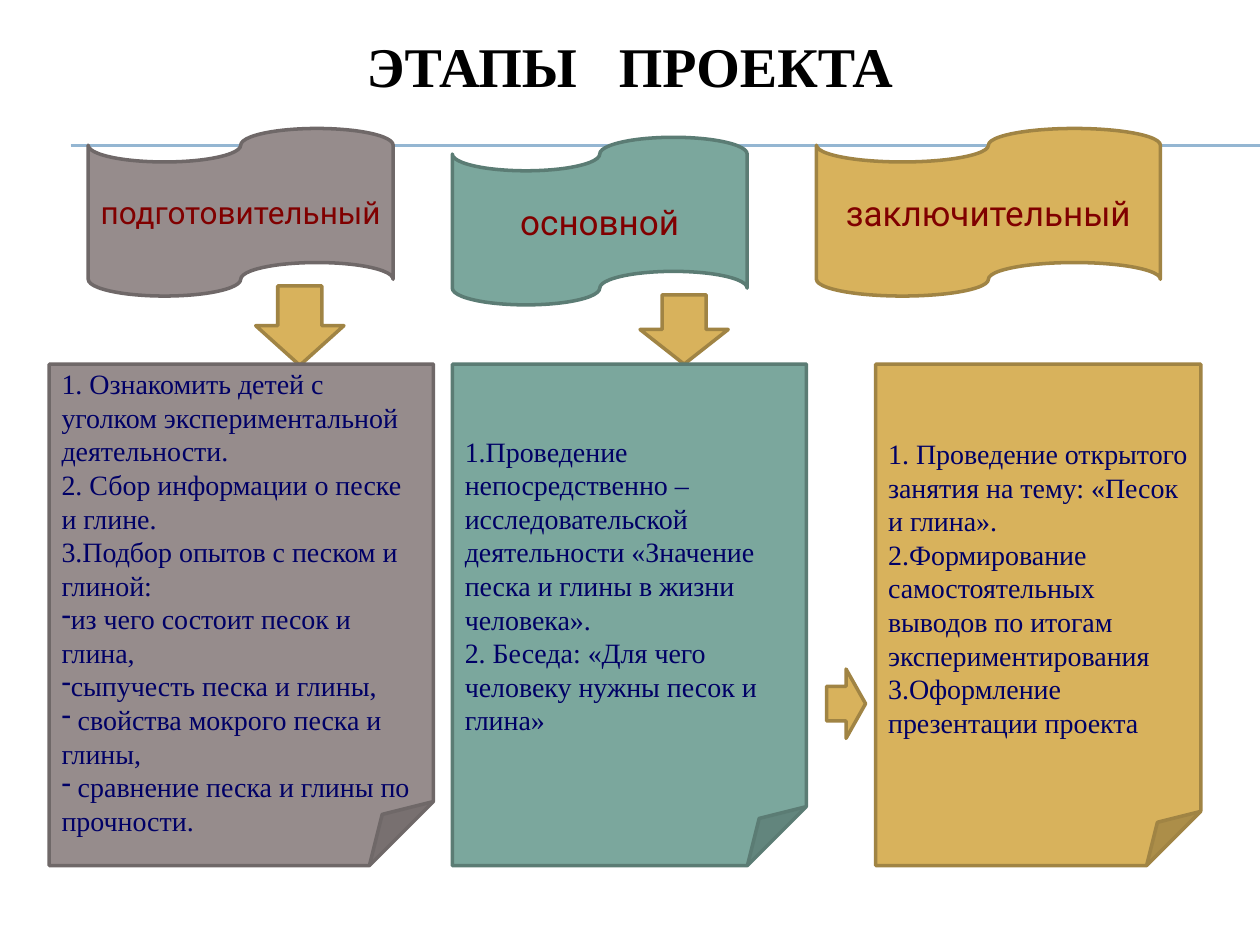
from lxml import etree
from pptx import Presentation
from pptx.dml.color import RGBColor
from pptx.enum.shapes import MSO_CONNECTOR, MSO_SHAPE
from pptx.enum.text import MSO_ANCHOR, PP_ALIGN
from pptx.oxml.ns import qn
from pptx.util import Inches, Pt

TAPE, NOTE = MSO_SHAPE.FLOWCHART_PUNCHED_TAPE, MSO_SHAPE.FOLDED_CORNER
DOWN, RIGHT = MSO_SHAPE.DOWN_ARROW, MSO_SHAPE.RIGHT_ARROW
STRAIGHT = MSO_CONNECTOR.STRAIGHT
TOP, MIDDLE = MSO_ANCHOR.TOP, MSO_ANCHOR.MIDDLE
LEFT, CENTER = PP_ALIGN.LEFT, PP_ALIGN.CENTER

TITLE = "ЭТАПЫ   ПРОЕКТА"
GREY, GREEN, GOLD = ("968C8C", "6F6868"), ("7BA79D", "5B7C74"), ("D8B25C", "A08444")
SERIF = "Times New Roman"
TAPE_HEIGHT, NOTE_TOP, NOTE_HEIGHT = 1.33, 2.89, 3.98

STAGES = [
    {"name": "подготовительный", "size": 18, "colors": GREY,
     "tape": (0.7, 1.02, 2.42), "note": (0.39, 3.05), "anchor": TOP,
     "steps": ["1. Ознакомить детей с уголком экспериментальной деятельности.",
               "2. Сбор информации о песке и глине.",
               "3.Подбор опытов с песком и глиной:"],
     "bullets": ["из чего состоит песок и глина,",
                 "сыпучесть песка и глины,",
                 " свойства мокрого песка и глины,",
                 " сравнение песка и глины по прочности."]},
    {"name": "основной", "size": 20, "colors": GREEN,
     "tape": (3.59, 1.09, 2.34), "note": (3.59, 2.81), "anchor": MIDDLE,
     "steps": ["1.Проведение непосредственно –исследовательской деятельности "
               "«Значение песка и глины в жизни человека».",
               "2. Беседа: «Для чего человеку нужны песок и глина»"],
     "bullets": []},
    {"name": "заключительный", "size": 20, "colors": GOLD,
     "tape": (6.48, 1.02, 2.73), "note": (6.95, 2.58), "anchor": MIDDLE,
     "steps": ["1. Проведение открытого занятия на тему: «Песок и глина».",
               "2.Формирование самостоятельных выводов по итогам экспериментирования",
               "3.Оформление презентации проекта"],
     "bullets": []},
]
ARROWS = [
    (DOWN, (2.03, 2.27, 0.7, 0.63)),
    (DOWN, (5.08, 2.34, 0.7, 0.55)),
    (RIGHT, (6.56, 5.31, 0.31, 0.55)),
]
RULES = [1.15, 1.16]


def rgb(value):
    return RGBColor.from_string(value)


def add_text(p, text, align, color, **font):
    p.alignment = align
    r = p.add_run()
    r.text = text
    for key, value in font.items():
        setattr(r.font, key, value)
    r.font.color.rgb = rgb(color)


def add_rule(s, y):
    line = s.shapes.add_connector(STRAIGHT, Inches(0.56), Inches(y), Inches(10), Inches(y))
    line.line.color.rgb = rgb("94B6D2")
    line.line.width = Pt(0.75)
    etree.SubElement(line._element.spPr, qn("a:effectLst"))


def add_shape(s, kind, box, colors):
    sp = s.shapes.add_shape(kind, *map(Inches, box))
    fill, line = colors
    sp.shadow.inherit = False
    sp.fill.solid()
    sp.fill.fore_color.rgb = rgb(fill)
    sp.line.color.rgb = rgb(line)
    sp.line.width = Pt(2)
    return sp


def add_tape(s, stage):
    sp = add_shape(s, TAPE, (*stage["tape"], TAPE_HEIGHT), stage["colors"])
    tf = sp.text_frame
    tf.word_wrap, tf.vertical_anchor = True, MIDDLE
    add_text(tf.paragraphs[0], stage["name"], CENTER, "800000",
             name="Roboto", size=Pt(stage["size"]))


def add_note(s, stage):
    left, width = stage["note"]
    sp = add_shape(s, NOTE, (left, NOTE_TOP, width, NOTE_HEIGHT), stage["colors"])
    tf = sp.text_frame
    tf.word_wrap, tf.vertical_anchor = True, stage["anchor"]
    if stage["anchor"] == TOP:
        tf.margin_top = Inches(0.02)
    steps = stage["steps"]
    for i, text in enumerate(steps + stage["bullets"]):
        p = tf.paragraphs[0] if i == 0 else tf.add_paragraph()
        add_text(p, text, LEFT, "000066", name=SERIF, size=Pt(16))
        if i >= len(steps):
            pPr = p._p.get_or_add_pPr()
            pPr.set("marL", "0")
            pPr.set("indent", "0")
            etree.SubElement(pPr, qn("a:buChar")).set("char", "-")


def main():
    prs = Presentation()
    prs.slide_width, prs.slide_height = Inches(10), Inches(7.5)
    s = prs.slides.add_slide(prs.slide_layouts[5])
    title = s.shapes.title
    title.left, title.top, title.width, title.height = map(Inches, (0.5, 0.17, 9, 0.69))
    title.text_frame.vertical_anchor = MIDDLE
    add_text(title.text_frame.paragraphs[0], TITLE, CENTER, "000000",
             name=SERIF, size=Pt(32), bold=True)
    for y in RULES:
        add_rule(s, y)
    for stage in STAGES:
        add_tape(s, stage)
    for kind, box in ARROWS:
        add_shape(s, kind, box, GOLD)
    for stage in STAGES:
        add_note(s, stage)
    prs.save("out.pptx")


if __name__ == "__main__":
    main()
